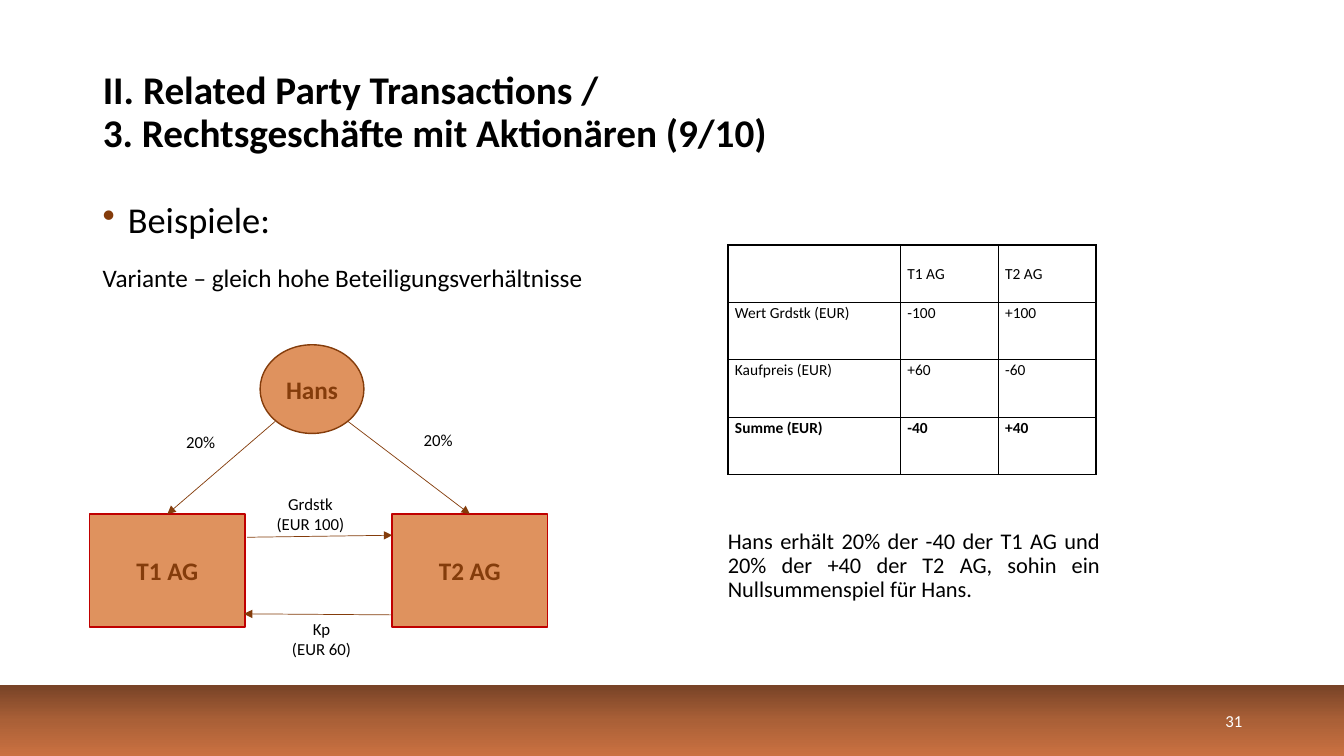
import copy
from typing import Any, NamedTuple

import pptx
import pptx.dml.color
import pptx.enum.shapes
import pptx.enum.text
import pptx.oxml.ns
import pptx.oxml.xmlchemy
import pptx.util

Inches = pptx.util.Inches
Pt = pptx.util.Pt
ALIGN = pptx.enum.text.PP_ALIGN
ANCHOR = pptx.enum.text.MSO_ANCHOR
SHAPE = pptx.enum.shapes.MSO_SHAPE
qn = pptx.oxml.ns.qn

FONT = "Calibri"
BLACK, WHITE = "000000", "FFFFFF"
BROWN, ORANGE, RED = "843C0B", "DF925E", "C00000"


class Box(NamedTuple):
    left: float
    top: float
    width: float
    height: float

    def lengths(self) -> list[int]:
        return [Inches(value) for value in self]


class Node(NamedTuple):
    text: str
    box: Box
    kind: Any
    outline: str


class Label(NamedTuple):
    text: str
    box: Box


class Arrow(NamedTuple):
    start: tuple[float, float]
    end: tuple[float, float]
    target: str = ""


NODES = [
    Node("T1 AG", Box(0.89, 5.1, 1.54, 1.12), SHAPE.RECTANGLE, RED),
    Node("Hans", Box(2.58, 3.42, 1.03, 0.88), SHAPE.OVAL, BROWN),
    Node("T2 AG", Box(3.89, 5.1, 1.54, 1.12), SHAPE.RECTANGLE, RED),
]
LABELS = [
    Label("20%", Box(3.99, 4.31, 0.71, 0.11)),
    Label("Grdstk\n(EUR 100)", Box(2.45, 4.96, 1.26, 0.28)),
    Label("20%", Box(1.22, 4.31, 1.54, 0.14)),
    Label("Kp\n(EUR 60)", Box(2.56, 6.2, 1.26, 0.28)),
]
ARROWS = [
    Arrow((3.45, 4.18), (4.66, 5.1), "T2 AG"),
    Arrow((2.73, 4.18), (1.66, 5.1), "T1 AG"),
    Arrow((2.45, 5.33), (3.89, 5.31)),
    Arrow((3.89, 6.1), (2.42, 6.09)),
]
COLUMN_WIDTHS = [1.71, 0.97, 0.97]
ROW_HEIGHT = 0.57
BALANCE = [
    ["", "T1 AG", "T2 AG"],
    ["Wert Grdstk (EUR)", "-100", "+100"],
    ["Kaufpreis (EUR)", "+60", "-60"],
    ["Summe (EUR)", "-40", "+40"],
]


def rgb(value: str) -> pptx.dml.color.RGBColor:
    return pptx.dml.color.RGBColor.from_string(value)


def element(tag: str, *children: Any, **attributes: str) -> Any:
    node = pptx.oxml.xmlchemy.OxmlElement(tag)
    for key, value in attributes.items():
        node.set(key, value)
    node.extend(children)
    return node


def write(frame: Any, text: str, *, size: float, color: str = BLACK, bold: bool = False,
          align: Any = ALIGN.LEFT, anchor: Any = ANCHOR.MIDDLE, spacing: float = 1.0) -> None:
    """Fill a text frame; a newline starts a paragraph, a vertical tab breaks a line."""
    frame.text = text
    frame.word_wrap = True
    frame.vertical_anchor = anchor
    for paragraph in frame.paragraphs:
        paragraph.alignment = align
        paragraph.line_spacing = spacing
        for run in paragraph.runs:
            run.font.name = FONT
            run.font.size = Pt(size)
            run.font.bold = bold
            run.font.color.rgb = rgb(color)


def add_text(slide: Any, box: Box, text: str, **text_format: Any) -> Any:
    frame = slide.shapes.add_textbox(*box.lengths()).text_frame
    write(frame, text, **text_format)
    return frame


def add_filled(slide: Any, kind: Any, box: Box, fill: str, outline: str) -> Any:
    shape = slide.shapes.add_shape(kind, *box.lengths())
    shape.shadow.inherit = False
    shape.fill.solid()
    shape.fill.fore_color.rgb = rgb(fill)
    shape.line.color.rgb = rgb(outline)
    shape.line.width = Pt(1)
    return shape


def add_footer_band(slide: Any) -> None:
    band = slide.shapes.add_shape(SHAPE.RECTANGLE, *Box(0, 6.8, 13.33, 0.7).lengths())
    band.shadow.inherit = False
    band.line.fill.background()
    band.fill.gradient()
    band.fill.gradient_angle = 270
    stop_list = band.element.spPr.find(".//" + qn("a:gsLst"))
    stop_list.insert(1, copy.deepcopy(stop_list[0]))
    colors = ["784327", "AA6037", "CA7141"]
    for index, (stop, color) in enumerate(zip(band.fill.gradient_stops, colors)):
        stop.position = index / 2
        stop.color.rgb = rgb(color)


def add_arrow(slide: Any, arrow: Arrow, nodes: dict[str, Any]) -> None:
    ends = [Inches(value) for value in arrow.start + arrow.end]
    line = slide.shapes.add_connector(pptx.enum.shapes.MSO_CONNECTOR.STRAIGHT, *ends)
    if arrow.target:
        line.end_connect(nodes[arrow.target], 0)
    line.line.color.rgb = rgb(BROWN)
    line.line.width = Pt(0.5)
    properties = line._element.spPr
    properties.find(qn("a:ln")).append(element("a:tailEnd", type="triangle"))
    properties.append(element("a:effectLst"))


def add_bullet(paragraph: Any) -> None:
    properties = paragraph._p.get_or_add_pPr()
    properties.set("marL", str(Inches(0.25)))
    properties.set("indent", str(Inches(-0.25)))
    properties.append(element("a:buClr", element("a:srgbClr", val=BROWN)))
    properties.append(element("a:buChar", char="•"))


def add_borders(cell: Any) -> None:
    for side in ("a:lnL", "a:lnR", "a:lnT", "a:lnB"):
        fill = element("a:solidFill", element("a:srgbClr", val=BLACK))
        cell._tc.get_or_add_tcPr().append(element(side, fill, w=str(Pt(1))))


def add_balance_table(slide: Any) -> None:
    box = Box(7.22, 2.43, sum(COLUMN_WIDTHS), ROW_HEIGHT * len(BALANCE))
    table = slide.shapes.add_table(len(BALANCE), len(COLUMN_WIDTHS), *box.lengths()).table
    table.first_row = table.horz_banding = False
    for column, width in zip(table.columns, COLUMN_WIDTHS):
        column.width = Inches(width)
    for row, values in enumerate(BALANCE):
        table.rows[row].height = Inches(ROW_HEIGHT)
        for column, value in enumerate(values):
            cell = table.cell(row, column)
            write(cell.text_frame, value, size=11, spacing=1.07, bold=row == len(BALANCE) - 1)
            cell.vertical_anchor = ANCHOR.TOP if row else ANCHOR.MIDDLE
            cell.margin_left = cell.margin_right = Inches(0.07)
            cell.margin_top = cell.margin_bottom = 0
            add_borders(cell)
            cell.fill.background()


def main() -> None:
    deck = pptx.Presentation()
    deck.slide_width, deck.slide_height = Inches(13.33), Inches(7.5)
    slide = deck.slides.add_slide(deck.slide_layouts.get_by_name("Title Only"))
    add_footer_band(slide)

    title = slide.shapes.title
    title.left, title.top, title.width, title.height = Box(0.92, 0.4, 10.53, 1.45).lengths()
    write(title.text_frame, "II. Related Party Transactions /\v3. Rechtsgeschäfte mit Aktionären (9/10)",
          size=28, bold=True, spacing=0.9)
    title.text_frame.auto_size = pptx.enum.text.MSO_AUTO_SIZE.NONE

    examples = add_text(slide, Box(0.92, 1.96, 6, 1.1),
                        "Beispiele:\nVariante – gleich hohe Beteiligungsverhältnisse",
                        size=18, anchor=ANCHOR.TOP, spacing=0.9)
    heading, variant = examples.paragraphs
    add_bullet(heading)
    heading.runs[0].font.size = Pt(26)
    variant.space_before = Pt(17)

    add_text(slide, Box(9.42, 6.95, 3, 0.4), "31", size=12, color=WHITE, align=ALIGN.RIGHT)
    add_balance_table(slide)
    add_text(slide, Box(7.12, 4.52, 3.89, 2.2),
             "Hans erhält 20% der -40 der T1 AG und 20% der +40 der T2 AG, "
             "sohin ein Nullsummenspiel für Hans.", size=16, align=ALIGN.JUSTIFY, spacing=0.9)

    nodes = {}
    for node in NODES:
        nodes[node.text] = add_filled(slide, node.kind, node.box, ORANGE, node.outline)
        write(nodes[node.text].text_frame, node.text, size=18, color=BROWN, bold=True, align=ALIGN.CENTER)
    for label in LABELS:
        patch = add_filled(slide, SHAPE.RECTANGLE, label.box, WHITE, WHITE)
        write(patch.text_frame, label.text, size=12, align=ALIGN.CENTER)
    for arrow in ARROWS:
        add_arrow(slide, arrow, nodes)
    deck.save("out.pptx")


if __name__ == "__main__":
    main()
